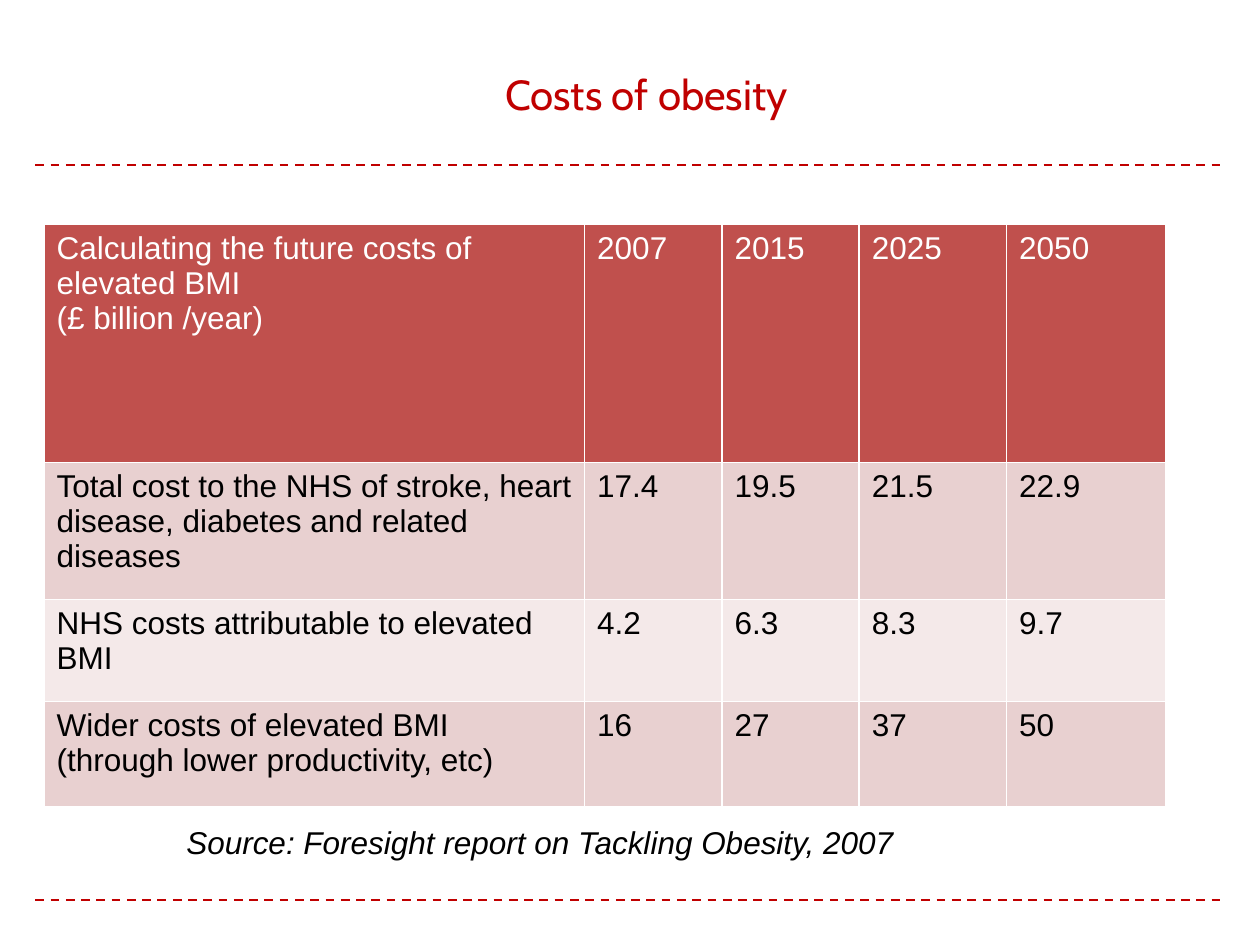
from dataclasses import dataclass

from lxml import etree
from pptx import Presentation, util as u
from pptx.dml.color import RGBColor
from pptx.enum import dml, shapes, text
from pptx.oxml import parse_xml
from pptx.oxml.ns import nsdecls, qn


@dataclass(frozen=True)
class Theme:
    accent: str = "C00000"
    header: str = "C0504D"
    bands: tuple = ("E8D0D0", "F4E9E9")
    white: str = "FFFFFF"
    ink: str = "000000"
    heading_font: str = "Cabin"
    body_font: str = "Arial"
    title_size: float = 24
    body_size: float = 18
    rule_width: float = 1.25
    border_width: float = 1


def write_text(frame, content, *, font, size, color, italic=False,
               align=text.PP_ALIGN.LEFT, anchor=text.MSO_ANCHOR.TOP):
    """Fill a text frame, one paragraph per line of content."""
    frame.word_wrap = True
    frame.vertical_anchor = anchor
    for index, line in enumerate(content.split("\n")):
        paragraph = frame.paragraphs[0] if index == 0 else frame.add_paragraph()
        paragraph.alignment = align
        run = paragraph.add_run()
        run.text = line
        run.font.name = font
        run.font.size = u.Pt(size)
        run.font.italic = italic
        run.font.color.rgb = RGBColor.from_string(color)


class SlideBuilder:
    """Places elements on a grid of 100 columns by 75 rows."""

    COLUMNS, ROWS = 100, 75

    def __init__(self, presentation, theme):
        self.theme = theme
        self.cell_width = presentation.slide_width / self.COLUMNS
        self.cell_height = presentation.slide_height / self.ROWS
        self.slide = presentation.slides.add_slide(presentation.slide_layouts[6])

    def across(self, columns):
        return u.Emu(round(columns * self.cell_width))

    def down(self, rows):
        return u.Emu(round(rows * self.cell_height))

    def box(self, left, top, width, height):
        return (self.across(left), self.down(top),
                self.across(width), self.down(height))

    def rule(self, row, margin):
        y = self.down(row)
        line = self.slide.shapes.add_connector(
            shapes.MSO_CONNECTOR.STRAIGHT,
            self.across(margin), y, self.across(self.COLUMNS - margin), y)
        line.line.color.rgb = RGBColor.from_string(self.theme.accent)
        line.line.width = u.Pt(self.theme.rule_width)
        line.line.dash_style = dml.MSO_LINE.DASH
        etree.SubElement(line._element.spPr, qn("a:effectLst"))

    def label(self, content, place, **style):
        shape = self.slide.shapes.add_textbox(*self.box(*place))
        write_text(shape.text_frame, content, **style)

    def table(self, records, left, top, widths, heights):
        place = self.box(left, top, sum(widths), sum(heights))
        table = self.slide.shapes.add_table(
            len(heights), len(widths), *place).table
        for column, width in zip(table.columns, widths):
            column.width = self.across(width)
        for row, height in zip(table.rows, heights):
            row.height = self.down(height)
        for row_index, record in enumerate(records):
            if row_index == 0:
                fill, ink = self.theme.header, self.theme.white
            else:
                fill, ink = self.theme.bands[(row_index - 1) % 2], self.theme.ink
            for column_index, value in enumerate(record):
                cell = table.cell(row_index, column_index)
                self.cell_borders(cell)
                cell.fill.solid()
                cell.fill.fore_color.rgb = RGBColor.from_string(fill)
                write_text(cell.text_frame, value, font=self.theme.body_font,
                           size=self.theme.body_size, color=ink)

    def cell_borders(self, cell):
        properties = cell._tc.get_or_add_tcPr()
        for side in ("lnL", "lnR", "lnT", "lnB"):
            properties.append(parse_xml(
                f'<a:{side} {nsdecls("a")} w="{u.Pt(self.theme.border_width)}">'
                f'<a:solidFill><a:srgbClr val="{self.theme.white}"/></a:solidFill>'
                f'</a:{side}>'))


COSTS = [
    ("Calculating the future costs of elevated BMI\n(£ billion /year)",
     "2007", "2015", "2025", "2050"),
    ("Total cost to the NHS of stroke, heart disease, diabetes and related diseases",
     "17.4", "19.5", "21.5", "22.9"),
    ("NHS costs attributable to elevated BMI", "4.2", "6.3", "8.3", "9.7"),
    ("Wider costs of elevated BMI (through lower productivity, etc)",
     "16", "27", "37", "50"),
]


def main():
    presentation = Presentation()
    presentation.slide_width, presentation.slide_height = u.Inches(10), u.Inches(7.5)
    theme = Theme()
    builder = SlideBuilder(presentation, theme)

    # Dashed rules under the title and above the bottom edge
    for row in (13.1, 71.4):
        builder.rule(row, margin=2.8)

    # Title
    builder.label("Costs of obesity", (6.7, 2.5, 89.2, 7.4),
                  font=theme.heading_font, size=theme.title_size,
                  color=theme.accent, align=text.PP_ALIGN.CENTER,
                  anchor=text.MSO_ANCHOR.BOTTOM)

    # Cost table
    builder.table(COSTS, left=3.5, top=17.8,
                  widths=(42.9, 10.9, 10.9, 11.7, 12.6),
                  heights=(18.9, 10.9, 8.1, 8.3))

    # Source line
    builder.label("Source: Foresight report on Tackling Obesity, 2007",
                  (13.8, 64.8, 63.8, 4), font=theme.body_font,
                  size=theme.body_size, color=theme.ink, italic=True)

    presentation.save("out.pptx")


if __name__ == "__main__":
    main()
